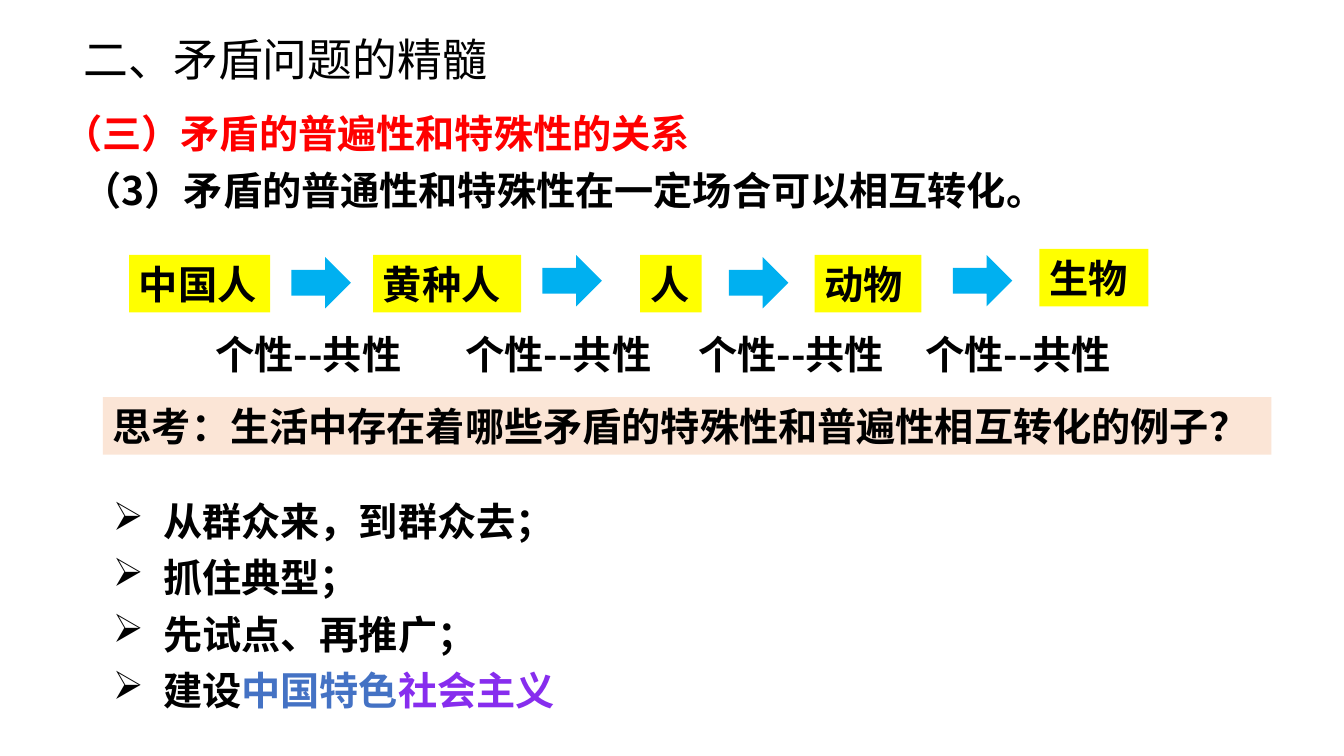
"""Builds the slide on how universality and particularity turn into each other."""
from lxml import etree
from pptx import Presentation
from pptx import util as u
from pptx.dml.color import RGBColor
from pptx.enum import shapes, text
from pptx.oxml import ns

PX = 9144
FONT = "Noto Sans CJK SC"
COLORS = {
    "black": "000000", "red": "FF0000", "yellow": "FFFF00", "sky": "00B0F0",
    "peach": "FBE5D6", "blue": "4472C4", "purple": "872DEE",
}
LINE_HEIGHT = 57
CHAIN = [("中国人", 128, 253, 140), ("黄种人", 370, 253, 147), ("人", 635, 253, 61),
         ("动物", 808, 253, 106), ("生物", 1031, 247, 108)]
ARROWS = [(289, 255), (538, 253), (723, 255), (945, 253)]
PAIR_LEFTS = [204, 452, 683, 908]
EXAMPLES = [
    [("从群众来，到群众去；", "black")],
    [("抓住典型；", "black")],
    [("先试点、再推广；", "black")],
    [("建设", "black"), ("中国特色", "blue"), ("社会主义", "purple")],
]


def color(name):
    """Return the named colour."""
    return RGBColor.from_string(COLORS[name])


def box(*lengths):
    """Turn px lengths into EMU."""
    return [u.Emu(length * PX) for length in lengths]


def add_run(paragraph, words, color_name="black", size=28, bold=True):
    """Add one formatted run, with the font set for Latin and East Asian text."""
    run = paragraph.add_run()
    run.text = words
    font = run.font
    font.name, font.size, font.bold = FONT, u.Pt(size), bold
    font.color.rgb = color(color_name)
    latin = run._r.get_or_add_rPr().find(ns.qn("a:latin"))
    east_asian = etree.Element(ns.qn("a:ea"), typeface=FONT)
    latin.addnext(east_asian)


def set_frame(shape, wrap=True):
    """Prepare the text frame and return its first paragraph."""
    frame = shape.text_frame
    frame.word_wrap = wrap
    frame.auto_size = text.MSO_AUTO_SIZE.NONE
    frame.vertical_anchor = text.MSO_ANCHOR.MIDDLE
    paragraph = frame.paragraphs[0]
    paragraph.alignment = text.PP_ALIGN.LEFT
    return paragraph


def add_title(slide, words):
    """Place and format the title."""
    title = slide.shapes.title
    title.left, title.top, title.width, title.height = box(73, 26, 584, 64)
    add_run(set_frame(title), words, size=32, bold=False)


def add_line(slide, words, left, top, width, color_name="black", wrap=True):
    """Add a one-line text box."""
    shape = slide.shapes.add_textbox(*box(left, top, width, LINE_HEIGHT))
    add_run(set_frame(shape, wrap), words, color_name)


def add_filled(slide, kind, left, top, width, height, fill):
    """Add a borderless filled shape."""
    shape = slide.shapes.add_shape(kind, *box(left, top, width, height))
    shape.shadow.inherit = False
    shape.fill.solid()
    shape.fill.fore_color.rgb = color(fill)
    shape.line.fill.background()
    return shape


def add_label(slide, words, left, top, width, fill):
    """Add a filled rectangle with one line of text."""
    shape = add_filled(slide, shapes.MSO_SHAPE.RECTANGLE, left, top, width, LINE_HEIGHT, fill)
    add_run(set_frame(shape), words)


def add_bullets(slide, items, left, top, width, height):
    """Add the list with arrowhead bullets."""
    shape = slide.shapes.add_textbox(*box(left, top, width, height))
    first = set_frame(shape)
    for index, runs in enumerate(items):
        paragraph = first if index == 0 else shape.text_frame.add_paragraph()
        properties = paragraph._p.get_or_add_pPr()
        properties.set("marL", str(50 * PX))
        properties.set("indent", str(-50 * PX))
        etree.SubElement(properties, ns.qn("a:buChar"), char="➢")
        paragraph.line_spacing = 1.2
        for words, color_name in runs:
            add_run(paragraph, words, color_name)


def main():
    """Build and save the slide."""
    presentation = Presentation()
    presentation.slide_width, presentation.slide_height = box(1333, 750)
    slide = presentation.slides.add_slide(presentation.slide_layouts[5])
    add_title(slide, "二、矛盾问题的精髓")
    add_line(slide, "（三）矛盾的普遍性和特殊性的关系", 53, 103, 642, "red", wrap=False)
    add_line(slide, "（3）矛盾的普通性和特殊性在一定场合可以相互转化。", 72, 160, 1189)
    for words, left, top, width in CHAIN:
        add_label(slide, words, left, top, width, "yellow")
    for left, top in ARROWS:
        add_filled(slide, shapes.MSO_SHAPE.RIGHT_ARROW, left, top, 59, 51, "sky")
    for left in PAIR_LEFTS:
        add_line(slide, "个性--共性", left, 323, 231)
    add_label(slide, "思考：生活中存在着哪些矛盾的特殊性和普遍性相互转化的例子？",
              102, 394, 1159, "peach")
    add_bullets(slide, EXAMPLES, 102, 478, 1159, 236)
    presentation.save("out.pptx")


if __name__ == "__main__":
    main()
